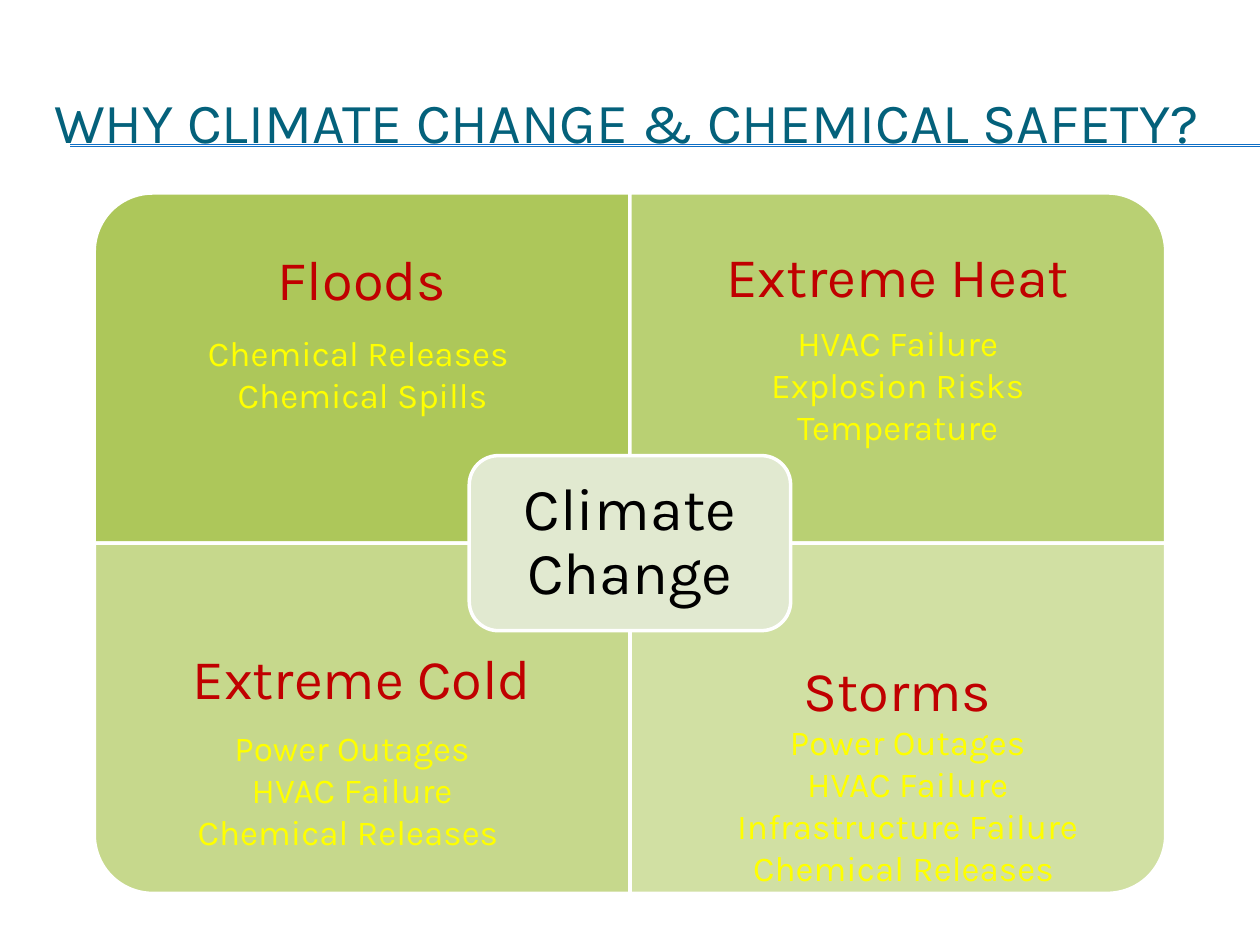
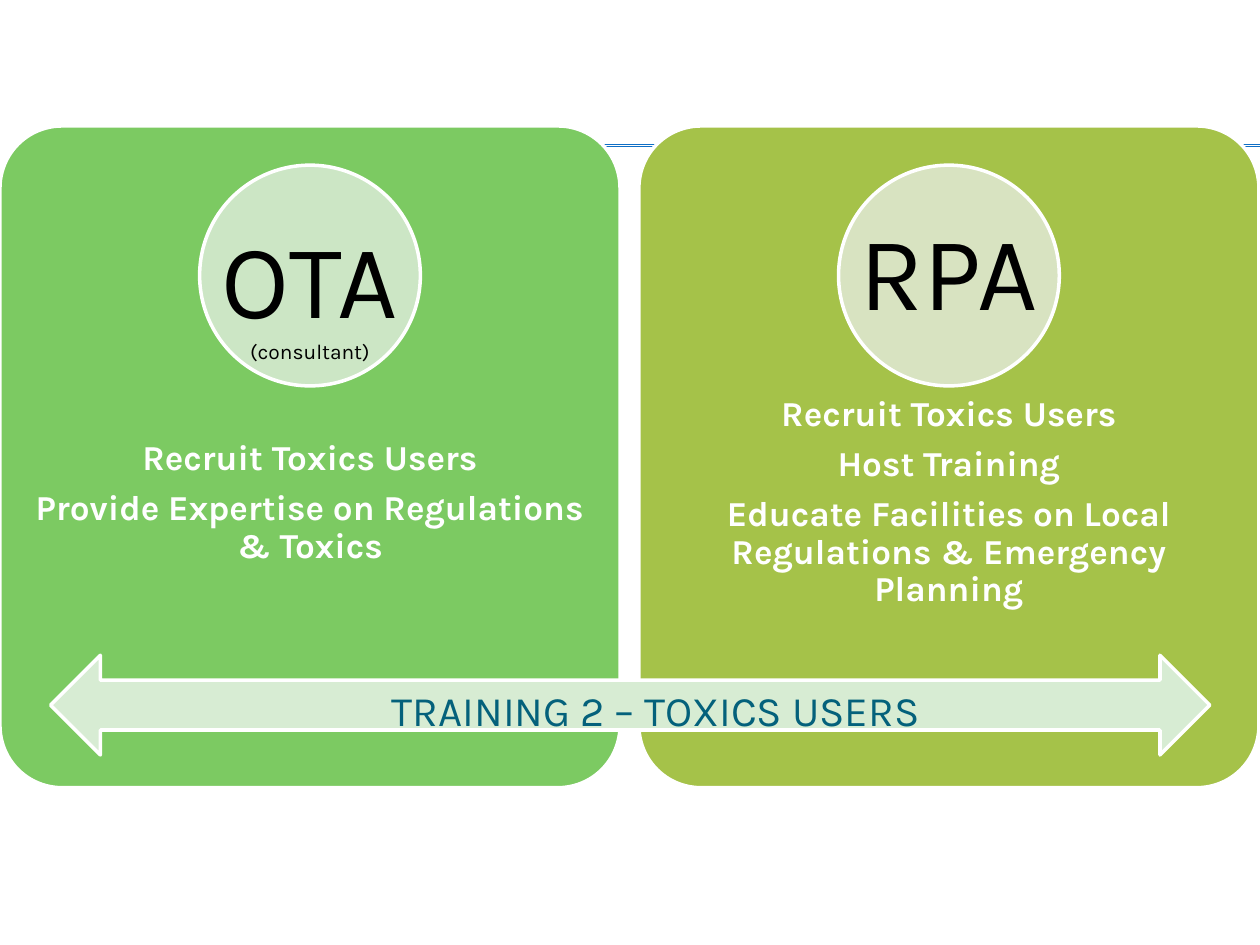
from lxml.etree import SubElement
from pptx import Presentation
from pptx.dml.color import RGBColor
from pptx.enum.shapes import MSO_CONNECTOR, MSO_SHAPE
from pptx.enum.text import MSO_ANCHOR, PP_ALIGN
from pptx.oxml.ns import qn
from pptx.util import Cm, Pt

FONT = "Karla"
WHITE = RGBColor(0xFF, 0xFF, 0xFF)
BLACK = RGBColor(0x00, 0x00, 0x00)
TITLE_TEAL = RGBColor(0x04, 0x61, 0x7B)
RULE_BLUE = RGBColor(0x0F, 0x6F, 0xC6)
OLIVE = RGBColor(0xA5, 0xC2, 0x49)
PALE_OLIVE = RGBColor(0xE1, 0xE9, 0xD0)
HEADING_RED = RGBColor(0xC0, 0x00, 0x00)
RISK_YELLOW = RGBColor(0xFF, 0xFF, 0x00)
GREEN = RGBColor(0x7C, 0xCA, 0x62)
GREEN_BADGE = RGBColor(0xCC, 0xE6, 0xC5)
OLIVE_BADGE = RGBColor(0xD8, 0xE3, 0xC1)
ARROW_GREEN = RGBColor(0xD7, 0xEC, 0xD3)

SLIDE_WIDTH, SLIDE_HEIGHT = 25.4, 19.05

# column, row, rotation, opacity %, heading, heading top, list offset, risks
QUADRANTS = [
    (0, 0, 270, 90, "Floods", 0.92, (1.28, 2.66),
     ["Chemical Releases ", "Chemical Spills"]),
    (1, 0, 0, 77, "Extreme Heat", 0.85, (1.27, 2.46),
     ["HVAC Failure", "Explosion Risks", "Temperature"]),
    (0, 1, 180, 63, "Extreme Cold", 1.89, (1.07, 3.58),
     ["Power Outages", "HVAC Failure", "Chemical Releases "]),
    (1, 1, 90, 50, "Storms", 2.14, (1.47, 3.45),
     ["Power Outages", "HVAC Failure", "Infrastructure Failure",
      "Chemical Releases "]),
]

# fill, badge fill, badge lines with sizes, badge text top, duties
PARTNERS = [
    (GREEN, GREEN_BADGE, [("OTA", 60), ("(consultant)", 12)], 1.63,
     ["Recruit Toxics Users", "Provide Expertise on Regulations & Toxics"]),
    (OLIVE, OLIVE_BADGE, [("RPA", 60)], 1.47,
     ["Recruit Toxics Users", "Host Training",
      "Educate Facilities on Local Regulations & Emergency Planning"]),
]


def write_lines(frame, lines, size, color, align=PP_ALIGN.CENTER, bold=False,
                line_spacing=None, space_after=0):
    frame.word_wrap = True
    for index, line in enumerate(lines):
        paragraph = frame.paragraphs[0] if index == 0 else frame.add_paragraph()
        paragraph.text = line
        paragraph.alignment = align
        paragraph.line_spacing = line_spacing
        paragraph.space_after = Pt(space_after)
        paragraph.font.name = FONT
        paragraph.font.size = Pt(size)
        paragraph.font.bold = bold
        paragraph.font.color.rgb = color


def add_text(slide, box, lines, size, color, anchor=MSO_ANCHOR.TOP, **style):
    frame = slide.shapes.add_textbox(*map(Cm, box)).text_frame
    frame.vertical_anchor = anchor
    write_lines(frame, lines, size, color, **style)
    return frame


def add_panel(slide, preset, box, fill):
    """Add a filled shape with the white outline all panels share."""
    shape = slide.shapes.add_shape(preset, *map(Cm, box))
    shape.shadow.inherit = False
    shape.fill.solid()
    shape.fill.fore_color.rgb = fill
    shape.line.color.rgb = WHITE
    shape.line.width = Pt(2)
    return shape


def add_ruled_slide(presentation):
    """Add a blank slide with the double rule below the title."""
    slide = presentation.slides.add_slide(presentation.slide_layouts[6])
    for top in (2.92, 2.95):
        rule = slide.shapes.add_connector(
            MSO_CONNECTOR.STRAIGHT, Cm(1.42), Cm(top), Cm(SLIDE_WIDTH), Cm(top))
        rule.line.color.rgb = RULE_BLUE
        rule.line.width = Pt(0.75)
        SubElement(rule._element.spPr, qn("a:effectLst"))
    return slide


def add_title(slide, box, text, size, align):
    add_text(slide, box, [text], size, TITLE_TEAL, MSO_ANCHOR.MIDDLE, align=align)


def add_quadrant(slide, box, rotation, opacity):
    """Fill the box with a panel whose one round corner is turned outwards."""
    left, top, width, height = box
    if rotation % 180:
        shift = (width - height) / 2
        box = left + shift, top - shift, height, width
    panel = add_panel(slide, MSO_SHAPE.ROUND_1_RECTANGLE, box, OLIVE)
    panel.rotation = rotation
    color = panel._element.spPr.find(qn("a:solidFill"))[0]
    SubElement(color, qn("a:alpha"), val=str(opacity * 1000))


def add_risks(slide, box, heading, heading_top, list_offset, risks):
    left, top, width, _ = box
    add_text(slide, (left, top + heading_top, width, 1.6), [heading], 32,
             HEADING_RED, MSO_ANCHOR.MIDDLE)
    list_left, list_top = list_offset
    add_text(slide, (left + list_left, top + list_top, 8.26, 0.25 + 0.85 * len(risks)),
             risks, 20, RISK_YELLOW)


def add_matrix(slide, left, top, width, height):
    cell_width, cell_height = width / 2, height / 2
    for column, row, rotation, opacity, *content in QUADRANTS:
        box = (left + column * cell_width, top + row * cell_height,
               cell_width, cell_height)
        add_quadrant(slide, box, rotation, opacity)
        add_risks(slide, box, *content)
    hub_width, hub_height = 6.48, 3.53
    hub = add_panel(slide, MSO_SHAPE.ROUNDED_RECTANGLE,
                    (left + (width - hub_width) / 2, top + (height - hub_height) / 2,
                     hub_width, hub_height), PALE_OLIVE)
    write_lines(hub.text_frame, ["Climate Change"], 34, BLACK, line_spacing=0.9)


def add_partner_card(slide, box, fill, badge_fill, badge_lines, badge_text_top, duties):
    left, top, width, _ = box
    card = add_panel(slide, MSO_SHAPE.ROUNDED_RECTANGLE, box, fill)
    card.adjustments[0] = 0.1
    duties_frame = add_text(slide, (left, top + 4.93, width, 5.33), duties, 20, WHITE,
                            MSO_ANCHOR.MIDDLE, bold=True, line_spacing=0.9,
                            space_after=7)
    duties_frame.margin_left = duties_frame.margin_right = Cm(0.4)
    badge_size = 4.45
    badge_left = left + (width - badge_size) / 2
    add_panel(slide, MSO_SHAPE.OVAL,
              (badge_left, top + 0.79, badge_size, badge_size), badge_fill)
    name_frame = add_text(slide, (badge_left, top + badge_text_top, badge_size, 3),
                          [text for text, _ in badge_lines], 60, BLACK)
    for paragraph, (_, size) in zip(name_frame.paragraphs, badge_lines):
        paragraph.font.size = Pt(size)


def build_climate_slide(presentation):
    slide = add_ruled_slide(presentation)
    add_title(slide, (0.84, 1.27, 24.13, 2.34),
              "WHY CLIMATE CHANGE & CHEMICAL SAFETY?", 32.4, PP_ALIGN.LEFT)
    add_matrix(slide, 1.9, 3.89, 21.6, 14.12)


def build_training_slide(presentation):
    slide = add_ruled_slide(presentation)
    card_width, card_pitch = 12.5, 12.88
    for index, partner in enumerate(PARTNERS):
        add_partner_card(slide, (index * card_pitch, 2.54, card_width, 13.34), *partner)
    add_panel(slide, MSO_SHAPE.LEFT_RIGHT_ARROW, (1.02, 13.21, 23.37, 2.01), ARROW_GREEN)
    add_title(slide, (2.74, 13.13, 20.96, 2.34),
              "TRAINING 2 – TOXICS USERS", 24, PP_ALIGN.CENTER)


def main():
    presentation = Presentation()
    presentation.slide_width = Cm(SLIDE_WIDTH)
    presentation.slide_height = Cm(SLIDE_HEIGHT)
    build_climate_slide(presentation)
    build_training_slide(presentation)
    presentation.save("out.pptx")


if __name__ == "__main__":
    main()
